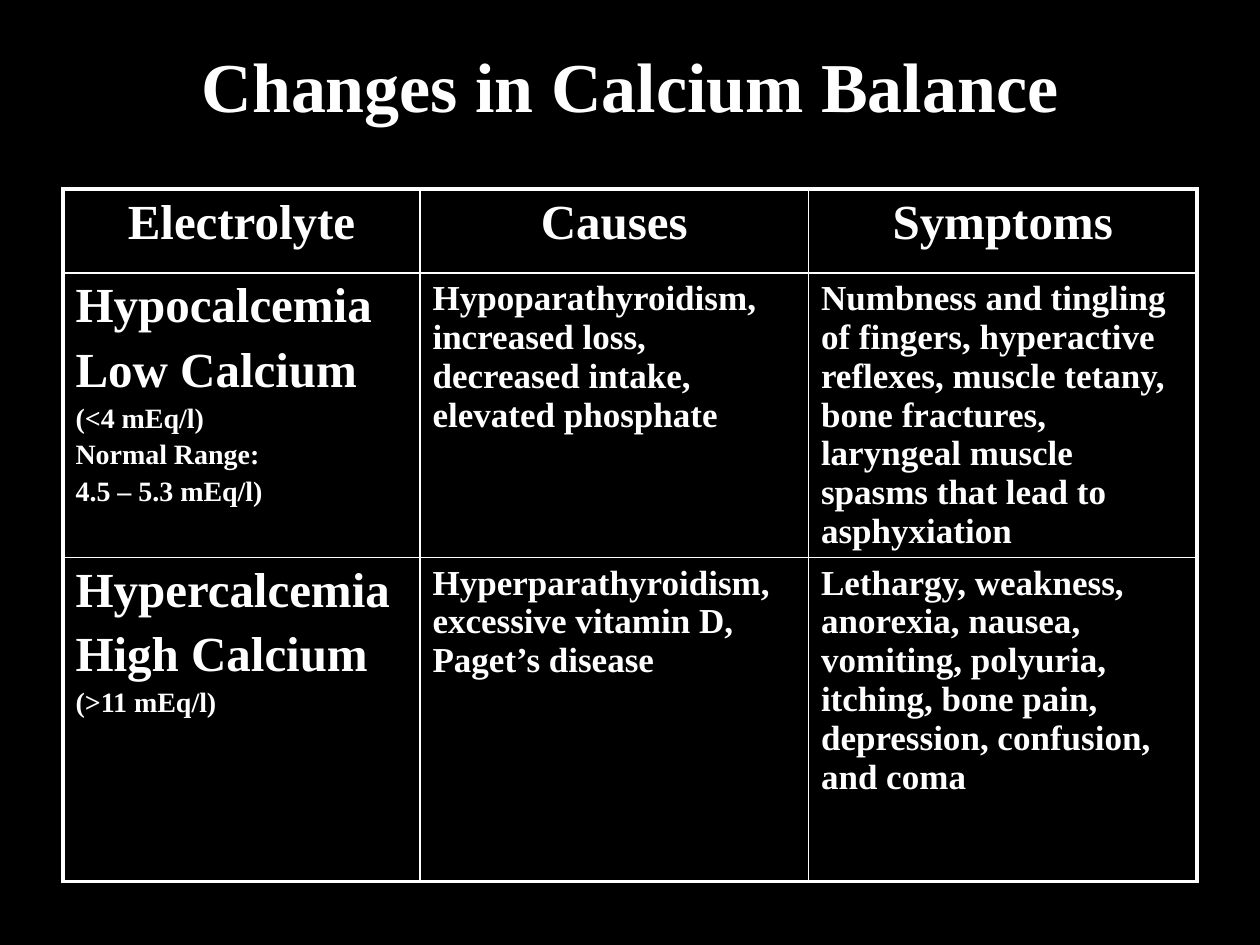
import pptx
import pptx.dml.color
import pptx.enum.text
import pptx.oxml.ns
import pptx.util
from lxml import etree

Pt = pptx.util.Pt
Align = pptx.enum.text.PP_ALIGN
BLACK = pptx.dml.color.RGBColor(0x00, 0x00, 0x00)
WHITE = pptx.dml.color.RGBColor(0xFF, 0xFF, 0xFF)

TITLE_SIZE, HEAD_SIZE, BODY_SIZE, NOTE_SIZE = 40, 28, 20, 16
OUTER_LINE, INNER_LINE = 2.25, 1

COLUMN_WIDTHS = [204, 222, 222]
ROW_HEIGHTS = [48, 162.5, 185]

# Each cell is a list of (text, size) paragraphs.
ROWS = [
    [[(head, HEAD_SIZE)] for head in ("Electrolyte", "Causes", "Symptoms")],
    [
        [("Hypocalcemia", HEAD_SIZE), ("Low Calcium", HEAD_SIZE),
         ("(<4 mEq/l)", NOTE_SIZE), ("Normal Range:", NOTE_SIZE),
         ("4.5 – 5.3 mEq/l)", NOTE_SIZE)],
        [("Hypoparathyroidism, increased loss, decreased intake, "
          "elevated phosphate", BODY_SIZE)],
        [("Numbness and tingling of fingers, hyperactive reflexes, "
          "muscle tetany, bone fractures, laryngeal muscle spasms "
          "that lead to asphyxiation", BODY_SIZE)],
    ],
    [
        [("Hypercalcemia", HEAD_SIZE), ("High Calcium", HEAD_SIZE),
         ("(>11 mEq/l)", NOTE_SIZE)],
        [("Hyperparathyroidism, excessive vitamin D, Paget’s disease",
          BODY_SIZE)],
        [("Lethargy, weakness, anorexia, nausea, vomiting, polyuria, "
          "itching, bone pain, depression, confusion, and coma", BODY_SIZE)],
    ],
]


class SlideWriter:
    """Holds the text style and the slide being filled."""

    def __init__(self, page, font="Times New Roman", color=WHITE):
        self.page = page
        self.font = font
        self.color = color

    def background(self, color):
        fill = self.page.background.fill
        fill.solid()
        fill.fore_color.rgb = color

    def span(self, para, text, size):
        span = para.add_run()
        span.text = text
        span.font.name = self.font
        span.font.size = Pt(size)
        span.font.bold = True
        span.font.color.rgb = self.color

    def title(self, text, left, top, width, height):
        box = self.page.shapes.title
        box.left, box.top = Pt(left), Pt(top)
        box.width, box.height = Pt(width), Pt(height)
        frame = box.text_frame
        frame.auto_size = pptx.enum.text.MSO_AUTO_SIZE.NONE
        frame.vertical_anchor = pptx.enum.text.MSO_ANCHOR.MIDDLE
        para = frame.paragraphs[0]
        para.alignment = Align.CENTER
        self.span(para, text, TITLE_SIZE)

    def cell_text(self, cell, paragraphs, alignment):
        """Write the paragraphs, each with a fifth of its size above it."""
        frame = cell.text_frame
        for index, (text, size) in enumerate(paragraphs):
            para = frame.add_paragraph() if index else frame.paragraphs[0]
            para.alignment = alignment
            para.space_before = Pt(size * 0.2)
            self.span(para, text, size)

    def cell_borders(self, cell, widths):
        """Draw the left, right, top and bottom lines, in that order."""
        qn = pptx.oxml.ns.qn
        properties = cell._tc.get_or_add_tcPr()
        for index, (side, width) in enumerate(zip("LRTB", widths)):
            line = etree.Element(qn(f"a:ln{side}"), w=str(Pt(width)))
            fill = etree.SubElement(line, qn("a:solidFill"))
            etree.SubElement(fill, qn("a:srgbClr"), val=str(self.color))
            properties.insert(index, line)

    def table(self, rows, left, top, column_widths, row_heights):
        last_row, last_column = len(rows) - 1, len(column_widths) - 1
        table = self.page.shapes.add_table(
            len(rows), len(column_widths), Pt(left), Pt(top),
            Pt(sum(column_widths)), Pt(sum(row_heights))).table
        table.first_row = table.horz_banding = False
        for column, width in zip(table.columns, column_widths):
            column.width = Pt(width)
        for r, (row, height) in enumerate(zip(rows, row_heights)):
            table.rows[r].height = Pt(height)
            for c, paragraphs in enumerate(row):
                cell = table.cell(r, c)
                cell.fill.solid()
                cell.fill.fore_color.rgb = BLACK
                self.cell_text(cell, paragraphs,
                               Align.LEFT if r else Align.CENTER)
                on_edge = (c == 0, c == last_column, r == 0, r == last_row)
                self.cell_borders(cell, [OUTER_LINE if edge else INNER_LINE
                                         for edge in on_edge])


def main():
    deck = pptx.Presentation()
    deck.slide_width, deck.slide_height = Pt(720), Pt(540)
    title_only = deck.slide_layouts[5]
    writer = SlideWriter(deck.slides.add_slide(title_only))
    writer.background(BLACK)
    writer.title("Changes in Calcium Balance", 54, 24, 612, 48)
    writer.table(ROWS, 36, 108, COLUMN_WIDTHS, ROW_HEIGHTS)
    deck.save("out.pptx")


if __name__ == "__main__":
    main()
